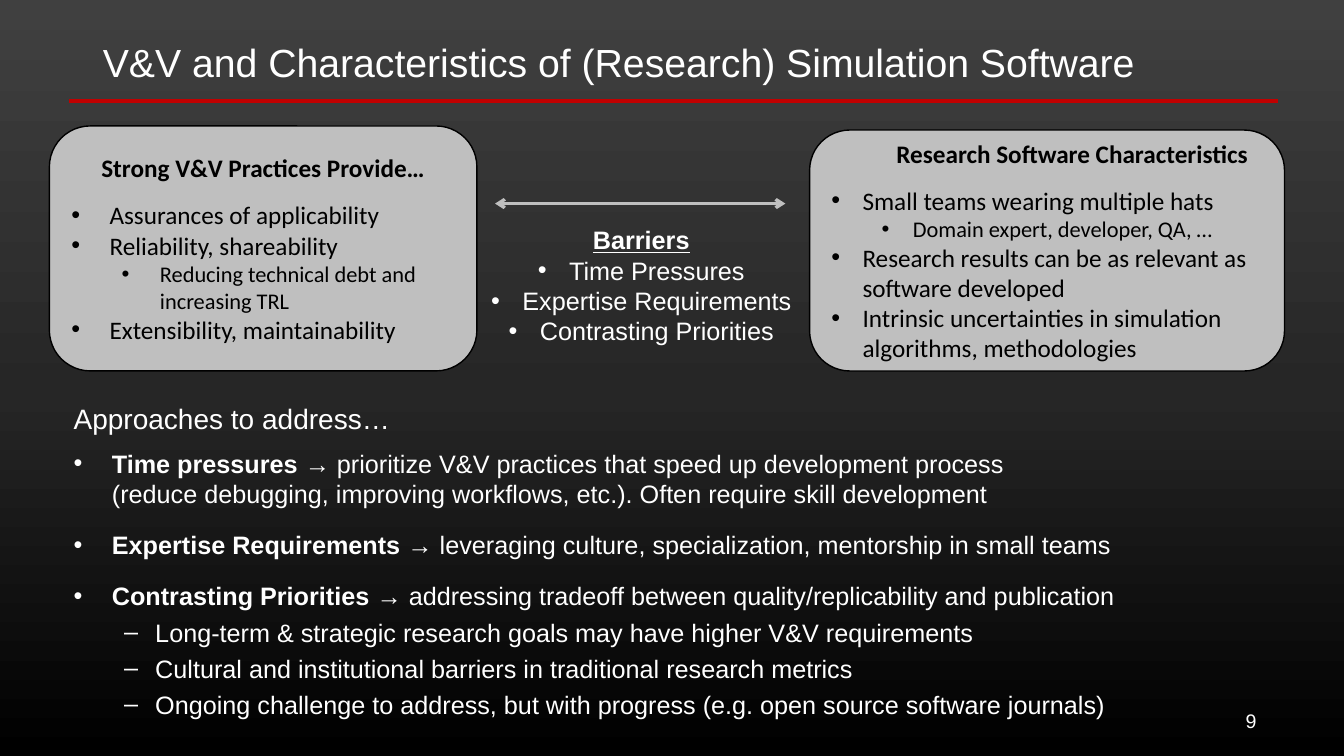
from copy import deepcopy

from lxml.etree import SubElement
from pptx import Presentation
from pptx.dml.color import RGBColor
from pptx.enum.shapes import MSO_CONNECTOR as Connector, MSO_SHAPE as Shape
from pptx.enum.text import MSO_ANCHOR as Anchor, MSO_AUTO_SIZE as AutoSize, PP_ALIGN as Align
from pptx.oxml.ns import qn
from pptx.util import Inches, Pt

COLORS = {"white": "FFFFFF", "black": "000000", "panel": "BFBFBF", "rule": "C00000"}
BACKGROUND = [(0, "000000"), (0.48, "262626"), (1, "404040")]

TITLE = "V&V and Characteristics of (Research) Simulation Software"
PAGE_NUMBER = "9"

# Each panel: box, indents of the two levels, heading indent, heading, (level, point)
PANELS = [
    ((0.49, 1.25, 4.24, 2.43), (0.38, 0.88), 0.38, 0, "Strong V&V Practices Provide…", [
        (0, "Assurances of applicability"),
        (0, "Reliability, shareability"),
        (1, "Reducing technical debt and increasing TRL"),
        (0, "Extensibility, maintainability"),
    ]),
    ((8.03, 1.29, 4.71, 2.39), (0.31, 0.81), 0.31, 0.5, "Research Software Characteristics", [
        (0, "Small teams wearing multiple hats"),
        (1, "Domain expert, developer, QA, …"),
        (0, "Research results can be as relevant as software developed"),
        (0, "Intrinsic uncertainties in simulation algorithms, methodologies"),
    ]),
]

BARRIERS_HEADING = "Barriers"
BARRIERS = ["Time Pressures", "Expertise Requirements", "Contrasting Priorities"]

APPROACHES_HEADING = "Approaches to address…"
# Space before, barrier, approach
APPROACHES = [
    (9.5, "Time pressures ",
     "→ prioritize V&V practices that speed up development process \n"
     "(reduce debugging, improving workflows, etc.). Often require skill development"),
    (15, "Expertise Requirements ",
     "→ leveraging culture, specialization, mentorship in small teams"),
    (15, "Contrasting Priorities ",
     "→ addressing tradeoff between quality/replicability and publication"),
]
PRIORITY_DETAILS = [
    "Long-term & strategic research goals may have higher V&V requirements",
    "Cultural and institutional barriers in traditional research metrics",
    "Ongoing challenge to address, but with progress (e.g. open source software journals)",
]


def rgb(name):
    return RGBColor.from_string(COLORS[name])


def write(frame, text, lead="", size=18, font="Arial", color="white", bold=False,
          underline=False, align=Align.LEFT, level=0, left=0, hang=0, bullet=None,
          before=0, line_spacing=None):
    """Add one paragraph to the frame; lead is a bold opening before the text."""
    paragraph = frame.paragraphs[0]
    if paragraph.runs:
        paragraph = frame.add_paragraph()
    paragraph.level = level
    paragraph.alignment = align
    paragraph.space_before = Pt(before)
    if line_spacing:
        paragraph.line_spacing = line_spacing
    properties = paragraph._p.get_or_add_pPr()
    properties.set("marL", str(Inches(left)))
    properties.set("indent", str(-Inches(hang)))
    if bullet:
        SubElement(properties, qn("a:buFont"), typeface="Arial")
        SubElement(properties, qn("a:buChar"), char=bullet)
    else:
        SubElement(properties, qn("a:buNone"))

    pieces = [(lead, True)] if lead else []
    pieces += [(line, bold) for line in text.split("\n")]
    for index, (piece, is_bold) in enumerate(pieces):
        if index > bool(lead):
            paragraph.add_line_break()
        run = paragraph.add_run()
        run.text = piece
        run.font.name = font
        run.font.size = Pt(size)
        run.font.bold = is_bold
        run.font.underline = underline
        run.font.color.rgb = rgb(color)


def set_frame(shape, anchor):
    frame = shape.text_frame
    frame.word_wrap = True
    frame.auto_size = AutoSize.NONE
    frame.vertical_anchor = anchor
    return frame


def move(shape, *box):
    shape.left, shape.top, shape.width, shape.height = map(Inches, box)


def add_text_box(slide, box, anchor):
    return set_frame(slide.shapes.add_textbox(*map(Inches, box)), anchor)


def add_level_line(slide, start, end, y, color, width, arrows=False):
    line = slide.shapes.add_connector(
        Connector.STRAIGHT, Inches(start), Inches(y), Inches(end), Inches(y))
    line.line.color.rgb = rgb(color)
    line.line.width = Pt(width)
    if arrows:
        outline = line.line._get_or_add_ln()
        for arrow_end in ("a:headEnd", "a:tailEnd"):
            SubElement(outline, qn(arrow_end), type="arrow")
    SubElement(line._element.spPr, qn("a:effectLst"))


def paint_background(slide):
    fill = slide.background.fill
    fill.gradient()
    fill.gradient_angle = 90
    stop_list = next(slide.element.iter(qn("a:gsLst")))
    stop_list.append(deepcopy(stop_list[0]))
    for stop, (position, color) in zip(fill.gradient_stops, BACKGROUND):
        stop.position = position
        stop.color.rgb = RGBColor.from_string(color)


def add_panel(slide, box, indents, hang, heading_indent, heading, points):
    panel = slide.shapes.add_shape(Shape.ROUNDED_RECTANGLE, *map(Inches, box))
    panel.shadow.inherit = False
    panel.fill.solid()
    panel.fill.fore_color.rgb = rgb("panel")
    panel.line.color.rgb = rgb("black")
    panel.line.width = Pt(1)
    frame = set_frame(panel, Anchor.MIDDLE)
    style = {"font": "Calibri", "color": "black"}
    write(frame, heading, bold=True, align=Align.CENTER, left=heading_indent, **style)
    for index, (level, point) in enumerate(points):
        write(frame, point, size=(18, 16)[level], level=level, left=indents[level],
              hang=hang, bullet="•", before=0 if index else 12, **style)


def main():
    deck = Presentation()
    deck.slide_width, deck.slide_height = Inches(13.33), Inches(7.5)
    slide = deck.slides.add_slide(deck.slide_layouts[1])
    paint_background(slide)

    add_level_line(slide, 0.68, 12.68, 1, "rule", 3)
    page_number = add_text_box(slide, (12.04, 6.95, 0.52, 0.4), Anchor.MIDDLE)
    write(page_number, PAGE_NUMBER, size=14, align=Align.RIGHT)

    title, body = slide.placeholders
    move(title, 0.92, 0.38, 11.5, 0.61)
    write(set_frame(title, Anchor.TOP), TITLE, size=28, line_spacing=0.9)

    move(body, 0.63, 3.93, 11.94, 3.66)
    approaches = set_frame(body, Anchor.TOP)
    write(approaches, APPROACHES_HEADING, size=20)
    for before, barrier, approach in APPROACHES:
        write(approaches, approach, lead=barrier, left=0.38, hang=0.38, bullet="•",
              before=before)
    for detail in PRIORITY_DETAILS:
        write(approaches, detail, level=1, left=0.81, hang=0.31, bullet="–", before=4.2)

    for panel in PANELS:
        add_panel(slide, *panel)

    add_level_line(slide, 4.91, 7.79, 2.02, "panel", 2.25, arrows=True)
    barriers = add_text_box(slide, (4.74, 2.18, 3.24, 1.31), Anchor.TOP)
    write(barriers, BARRIERS_HEADING, bold=True, underline=True, align=Align.CENTER)
    for barrier in BARRIERS:
        write(barriers, barrier, align=Align.CENTER, left=0.31, hang=0.31, bullet="•")

    deck.save("out.pptx")


if __name__ == "__main__":
    main()
